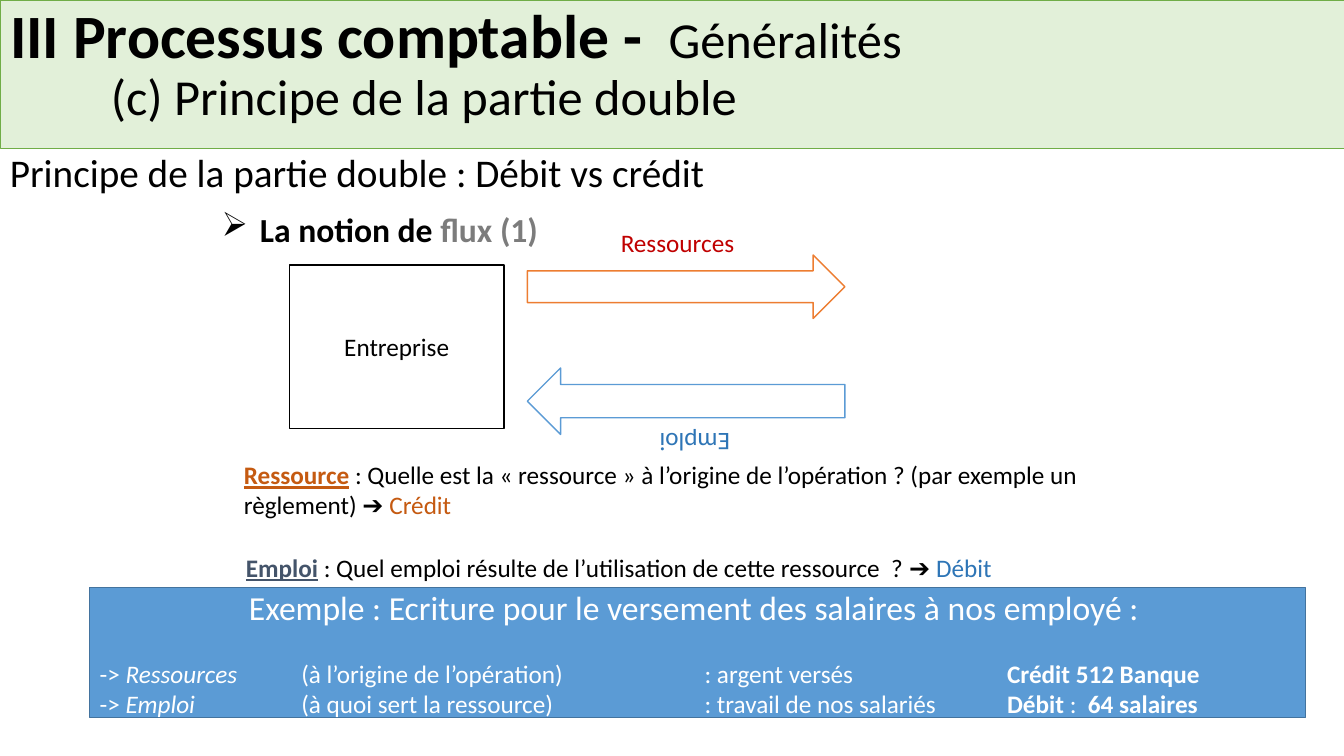
"""Build the slide on the double-entry principle: flows, resources and uses."""
from pptx import Presentation
from pptx.dml.color import RGBColor
from pptx.enum.shapes import MSO_SHAPE
from pptx.enum.text import MSO_ANCHOR, MSO_AUTO_SIZE, PP_ALIGN
from pptx.oxml.ns import qn
from pptx.util import Inches, Pt
from lxml import etree

LEFT, CENTER = PP_ALIGN.LEFT, PP_ALIGN.CENTER
TOP, MIDDLE = MSO_ANCHOR.TOP, MSO_ANCHOR.MIDDLE
RECTANGLE, ARROW = MSO_SHAPE.RECTANGLE, MSO_SHAPE.RIGHT_ARROW
FONT = "Calibri"
BLACK, WHITE = "000000", "FFFFFF"
ORANGE, BLUE = "C55A11", "2E75B6"

TITLE_LINES = [
    [("III Processus comptable - ", {"bold": True, "size": 44}), (" Généralités", {})],
    [("(c) Principe de la partie double", {})],
]
SUBTITLE = [("Principe de la partie double : Débit vs crédit", {})]
NOTION = [("La notion de ", {"bold": True}), ("flux (1)", {"bold": True, "color": "7C7C7C"})]

FLOWS = [
    {"label": "Ressources", "color": "C00000", "line": "ED7D31", "top": 2.53, "height": 0.63,
     "rotation": 0, "label_center": (6.72, 2.41)},
    {"label": "Emploi", "color": BLUE, "line": "5B9BD5", "top": 3.65, "height": 0.66,
     "rotation": 180, "label_center": (6.89, 4.4)},
]

DEFINITIONS = [
    ((2.32, 4.51, 8.58, 0.71), [
        ("Ressource", {"bold": True, "underline": True, "color": ORANGE}),
        (" : Quelle est la « ressource » à l’origine de l’opération ? (par exemple un règlement) ➔ ", {}),
        ("Crédit", {"color": ORANGE})]),
    ((2.34, 5.43, 8.58, 0.4), [
        ("Emploi", {"bold": True, "underline": True, "color": "44546A"}),
        (" : Quel emploi résulte de l’utilisation de cette ressource  ? ➔ ", {}),
        ("Débit", {"color": BLUE})]),
]

EXAMPLE_HEADING = [("Exemple : Ecriture pour le versement des salaires à nos employé : ", {})]
EXAMPLE_ENTRIES = [
    [("-> ", {}), ("Ressources", {"italic": True}),
     ("\t(à l’origine de l’opération)\t: argent versés\t", {}),
     ("Crédit 512 Banque", {"bold": True})],
    [("-> ", {}), ("Emploi", {"italic": True}),
     ("\t(à quoi sert la ressource)\t: travail de nos salariés\t", {}),
     ("Débit", {"bold": True}), (" :  ", {}), ("64 salaires", {"bold": True})],
]
EXAMPLE_TABS = (2, 6, 9)


def rgb(color):
    return RGBColor.from_string(color)


def prepare(shape, anchor):
    frame = shape.text_frame
    frame.word_wrap = True
    frame.auto_size = MSO_AUTO_SIZE.NONE
    frame.vertical_anchor = anchor
    return frame


def write(paragraph, runs, size, color=BLACK, alignment=LEFT):
    paragraph.alignment = alignment
    paragraph.font.name = FONT
    paragraph.font.size = Pt(size)
    paragraph.font.color.rgb = rgb(color)
    for text, style in runs:
        run = paragraph.add_run()
        run.text = text
        for key, value in style.items():
            if key == "color":
                run.font.color.rgb = rgb(value)
            else:
                setattr(run.font, key, Pt(value) if key == "size" else value)


def paint(shape, fill, line, width):
    shape.fill.solid()
    shape.fill.fore_color.rgb = rgb(fill)
    shape.line.color.rgb = rgb(line)
    shape.line.width = Pt(width)


def add_box(slide, kind, box, fill, line):
    shape = slide.shapes.add_shape(kind, *map(Inches, box))
    shape.shadow.inherit = False
    paint(shape, fill, line, 1)
    return shape


def add_text(slide, box, runs, size, color=BLACK, alignment=LEFT, anchor=TOP):
    shape = slide.shapes.add_textbox(*map(Inches, box))
    write(prepare(shape, anchor).paragraphs[0], runs, size, color, alignment)
    return shape


def indent(paragraph, margin, first_line=0):
    properties = paragraph._p.get_or_add_pPr()
    properties.set("marL", str(Inches(margin)))
    properties.set("indent", str(Inches(first_line)))
    return properties


def add_title(slide):
    title = slide.shapes.title
    title.left, title.top, title.width, title.height = map(Inches, (0, 0, 13.33, 1.47))
    paint(title, "E2F0D9", "70AD47", 0.5)
    frame = prepare(title, TOP)
    for index, runs in enumerate(TITLE_LINES):
        paragraph = frame.add_paragraph() if index else frame.paragraphs[0]
        write(paragraph, runs, 36)
        paragraph.line_spacing = 0.9
        indent(paragraph, index)


def add_flow(slide, flow):
    arrow = add_box(slide, ARROW, (5.23, flow["top"], 3.15, flow["height"]), WHITE, flow["line"])
    arrow.rotation = flow["rotation"]
    width, height = 2, 0.4
    x, y = flow["label_center"]
    label = add_text(slide, (x - width / 2, y - height / 2, width, height),
                     [(flow["label"], {})], 18, flow["color"], CENTER, MIDDLE)
    label.rotation = flow["rotation"]


def add_example(slide):
    example = add_box(slide, RECTANGLE, (0.89, 5.83, 12.06, 1.29), "5B9BD5", "43739E")
    frame = prepare(example, MIDDLE)
    heading = frame.paragraphs[0]
    write(heading, EXAMPLE_HEADING, 24, WHITE, CENTER)
    heading.space_after = Pt(22)
    for runs in EXAMPLE_ENTRIES:
        paragraph = frame.add_paragraph()
        write(paragraph, runs, 18, WHITE)
        properties = paragraph._p.get_or_add_pPr()
        tabs = etree.Element(qn("a:tabLst"))
        for position in EXAMPLE_TABS:
            etree.SubElement(tabs, qn("a:tab"), pos=str(Inches(position)), algn="l")
        properties.insert_element_before(tabs, "a:defRPr", "a:extLst")


def main():
    presentation = Presentation()
    presentation.slide_width, presentation.slide_height = Inches(13.33), Inches(7.5)
    slide = presentation.slides.add_slide(presentation.slide_layouts[5])
    add_title(slide)

    subtitle = add_text(slide, (0, 1.47, 13.33, 0.55), SUBTITLE, 28)
    subtitle.text_frame.paragraphs[0].line_spacing = 0.9
    notion = add_text(slide, (2.1, 2.02, 9.07, 0.5), NOTION, 24)
    properties = indent(notion.text_frame.paragraphs[0], 0.38, -0.38)
    bullet = etree.Element(qn("a:buChar"), char="➢")
    properties.insert_element_before(bullet, "a:tabLst", "a:defRPr", "a:extLst")

    company = add_box(slide, RECTANGLE, (2.87, 2.63, 2.13, 1.62), WHITE, BLACK)
    write(prepare(company, MIDDLE).paragraphs[0], [("Entreprise", {})], 18, BLACK, CENTER)
    for flow in FLOWS:
        add_flow(slide, flow)
    for box, runs in DEFINITIONS:
        add_text(slide, box, runs, 18)
    add_example(slide)
    presentation.save("out.pptx")


if __name__ == "__main__":
    main()
